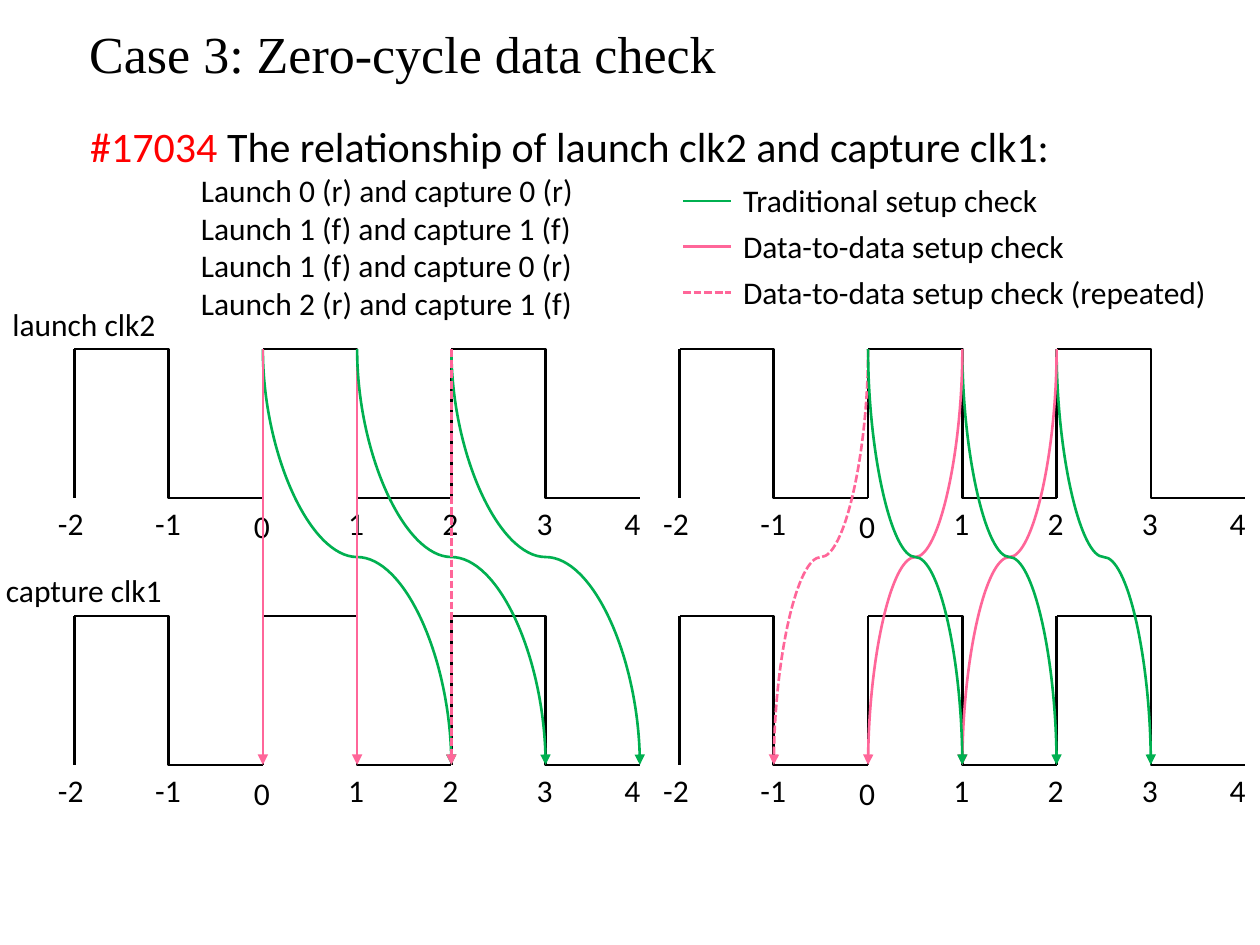
"""Builds the slide on the zero-cycle data check between two clocks."""
import lxml.etree
import pptx
import pptx.dml.color
import pptx.enum.dml
import pptx.enum.shapes
import pptx.enum.text
import pptx.oxml.ns
import pptx.util

Cm = pptx.util.Cm
Pt = pptx.util.Pt
RGBColor = pptx.dml.color.RGBColor
Kind = pptx.enum.shapes.MSO_CONNECTOR
qn = pptx.oxml.ns.qn

BLACK = RGBColor(0x00, 0x00, 0x00)
RED = RGBColor(0xFF, 0x00, 0x00)
GREEN = RGBColor(0x00, 0xB0, 0x50)
PINK = RGBColor(0xFF, 0x66, 0x99)

deck = pptx.Presentation()
deck.slide_width, deck.slide_height = Cm(25.4), Cm(19.05)
slide = deck.slides.add_slide(deck.slide_layouts[6])


def write(text, left, top, width, height, size=18, font="Calibri", wrap=False):
    box = slide.shapes.add_textbox(Cm(left), Cm(top), Cm(width), Cm(height))
    frame = box.text_frame
    frame.text = text
    frame.word_wrap = wrap
    for para in frame.paragraphs:
        for run in para.runs:
            run.font.size = Pt(size)
            run.font.name = font
            run.font.color.rgb = BLACK
    return frame


def join(kind, left, top, right, bottom, color=BLACK, dash=False):
    link = slide.shapes.add_connector(kind, Cm(left), Cm(top), Cm(right), Cm(bottom))
    link.line.color.rgb = color
    link.line.width = Pt(1.5)
    if dash:
        link.line.dash_style = pptx.enum.dml.MSO_LINE.SQUARE_DOT
    lxml.etree.SubElement(link._element.spPr, qn("a:effectLst"))
    return link


title = write("Case 3: Zero-cycle data check", 1.55, 0.48, 23.34, 1.32,
              29.7, "Times New Roman", True)
title.vertical_anchor = pptx.enum.text.MSO_ANCHOR.MIDDLE
title.paragraphs[0].line_spacing = 0.9

head = write("#17034 ", 1.57, 2.31, 22.43, 1.28, 24, wrap=True).paragraphs[0]
head.runs[0].font.color.rgb = RED
rest = head.add_run()
rest.text = "The relationship of launch clk2 and capture clk1:"
rest.font.size, rest.font.name = Pt(24), "Calibri"
rest.font.color.rgb = BLACK

write("Launch 0 (r) and capture 0 (r)\nLaunch 1 (f) and capture 1 (f)\n"
      "Launch 1 (f) and capture 0 (r)\nLaunch 2 (r) and capture 1 (f)",
      3.8, 3.32, 8.25, 3.33)

legend = [
    ("Traditional setup check", 3.53, 6.53, GREEN, False),
    ("Data-to-data setup check", 4.45, 7.01, PINK, False),
    ("Data-to-data setup check (repeated)", 5.38, 9.96, PINK, True),
]
for name, top, width, color, dash in legend:
    write(name, 14.73, top, width, 1.02)
    join(Kind.STRAIGHT, 13.77, top + 0.52, 14.73, top + 0.52, color, dash)

STEP = 1.9
SWING = 3
TOPS = (7.04, 12.42)
ZEROS = (5.3, 17.5)
nudge = {-2: -0.06, 4: -0.13}

write("launch clk2", 0, 6.02, 3.43, 1.02)
write("capture clk1", -0.13, 11.38, 3.68, 1.02)

for zero in ZEROS:
    for top in TOPS:
        low = top + SWING
        for tick in (-2, 0, 2):
            rise = zero + tick * STEP
            join(Kind.ELBOW, rise, top, rise + 2 * STEP, low)
            join(Kind.STRAIGHT, rise, top, rise, low)
        for tick in range(-2, 5):
            width = 1.04 if tick < 0 else 0.86
            mid = zero + tick * STEP + nudge.get(tick, 0)
            drop = 0.05 if tick == 0 else 0
            write(str(tick), mid - width / 2, low + drop, width, 1.02)

checks = [
    [(0, 2, GREEN, False), (0, 0, PINK, False), (1, 1, PINK, False),
     (1, 3, GREEN, False), (2, 4, GREEN, False), (2, 2, PINK, True)],
    [(0, -1, PINK, True), (2, 3, GREEN, False), (2, 1, PINK, False),
     (1, 2, GREEN, False), (1, 0, PINK, False), (0, 1, GREEN, False)],
]
start, stop = TOPS[0], TOPS[1] + SWING
mid, half = (start + stop) / 2, (stop - start) / 2
for zero, group in zip(ZEROS, checks):
    for launch, catch, color, dash in group:
        center = zero + (launch + catch) / 2 * STEP
        rise = abs(catch - launch) * STEP / 2
        side = 1 if catch > launch else -1
        curve = join(Kind.CURVE, center + side * half, mid - rise,
                     center - side * half, mid + rise, color, dash)
        curve._element.spPr.find(qn("a:xfrm")).set("rot", str((180 + side * 90) * 60000))
        line = curve._element.spPr.find(qn("a:ln"))
        lxml.etree.SubElement(line, qn("a:tailEnd"), type="triangle")

deck.save("out.pptx")
